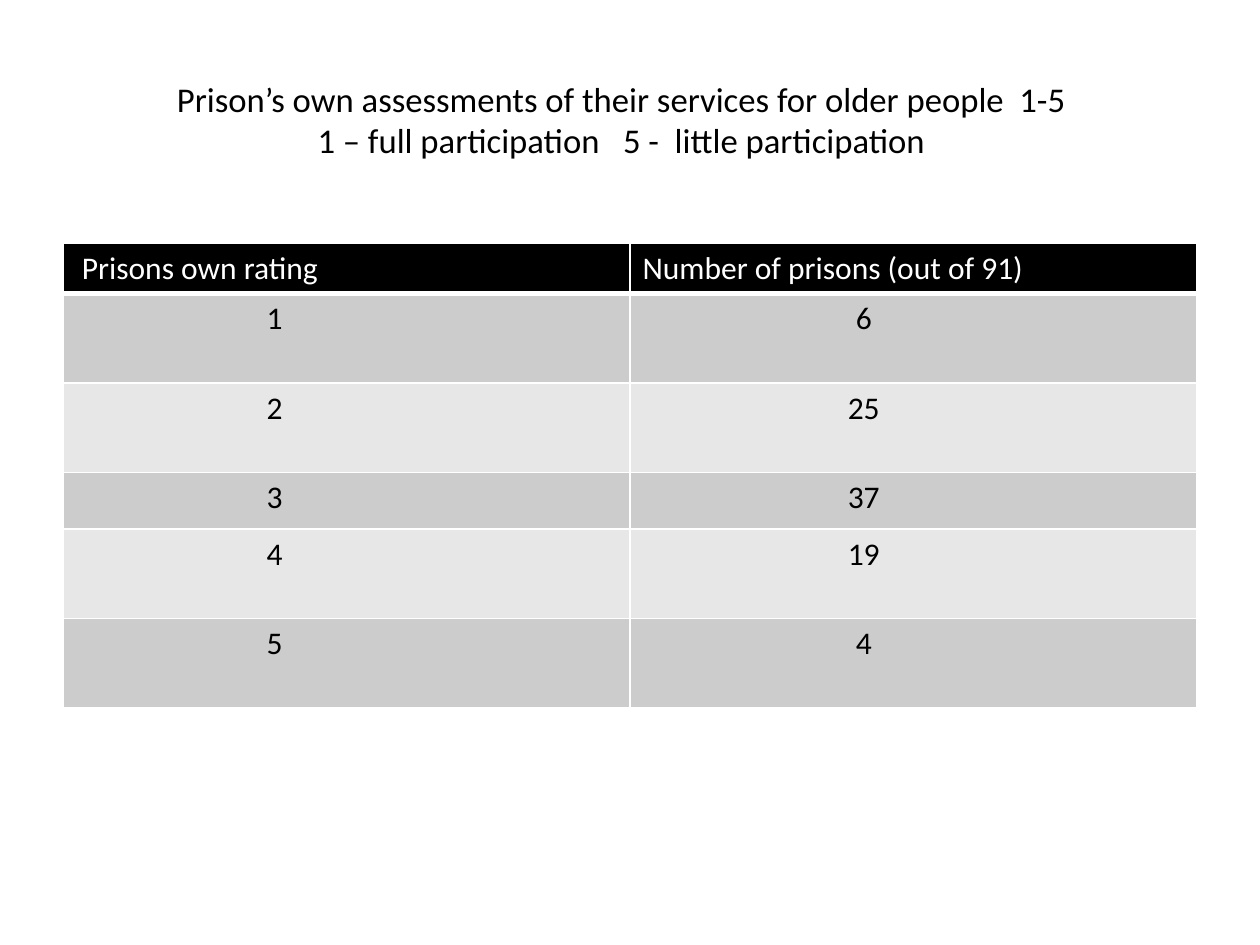
from dataclasses import dataclass

import pptx
import pptx.dml.color
import pptx.enum.text
import pptx.oxml
import pptx.oxml.ns
import pptx.table
import pptx.text.text
import pptx.util
from pptx.util import Inches

ALIGN = pptx.enum.text.PP_ALIGN


@dataclass(frozen=True)
class Theme:
    font: str = "Calibri"
    title_size: float = 19.8
    table_size: float = 18
    text: str = "000000"
    header_text: str = "FFFFFF"
    header_fill: str = "000000"
    bands: tuple[str, str] = ("CCCCCC", "E7E7E7")
    border: str = "FFFFFF"


@dataclass(frozen=True)
class Column:
    heading: str
    heading_inset: float
    value_right_inset: float


@dataclass(frozen=True)
class Rating:
    level: int
    prisons: int
    height: float = 0.71


THEME = Theme()
TITLE_LINES = (
    "Prison’s own assessments of their services for older people  1-5",
    "1 – full participation   5 -  little participation",
)
COLUMNS = (
    Column("Prisons own rating", 0.15, 1.24),
    Column("Number of prisons (out of 91)", 0.1, 0.89),
)
RATINGS = (
    Rating(1, 6),
    Rating(2, 25),
    Rating(3, 37, height=0.45),
    Rating(4, 19),
    Rating(5, 4),
)
HEADER_HEIGHT = 0.39
TABLE_WIDTH = 9


def style_paragraph(paragraph: pptx.text.text._Paragraph, size: float,
                    color: str, align: ALIGN) -> None:
    paragraph.alignment = align
    paragraph.font.name = THEME.font
    paragraph.font.size = pptx.util.Pt(size)
    paragraph.font.color.rgb = pptx.dml.color.RGBColor.from_string(color)


def set_borders(cell: pptx.table._Cell, bottom: float = 1) -> None:
    """Add the cell's border lines; call before the fill, which must follow them."""
    properties = cell._tc.get_or_add_tcPr()
    for side, width in (("L", 1), ("R", 1), ("T", 1), ("B", bottom)):
        properties.append(pptx.oxml.parse_xml(
            f'<a:ln{side} {pptx.oxml.ns.nsdecls("a")} w="{pptx.util.Pt(width)}">'
            f'<a:solidFill><a:srgbClr val="{THEME.border}"/></a:solidFill>'
            f'</a:ln{side}>'))


def fill_cell(cell: pptx.table._Cell, text: str, fill: str, color: str,
              align: ALIGN) -> None:
    cell.fill.solid()
    cell.fill.fore_color.rgb = pptx.dml.color.RGBColor.from_string(fill)
    cell.text = text
    style_paragraph(cell.text_frame.paragraphs[0], THEME.table_size, color, align)


def add_title(slide: pptx.slide.Slide) -> None:
    title = slide.shapes.add_textbox(
        Inches(0.43), Inches(0.32), Inches(9), Inches(1.25)).text_frame
    title.word_wrap = True
    title.vertical_anchor = pptx.enum.text.MSO_ANCHOR.MIDDLE
    title.text = "\n".join(TITLE_LINES)
    for line in title.paragraphs:
        style_paragraph(line, THEME.title_size, THEME.text, ALIGN.CENTER)


def add_ratings_table(slide: pptx.slide.Slide) -> None:
    heights = [HEADER_HEIGHT] + [rating.height for rating in RATINGS]
    table = slide.shapes.add_table(
        len(heights), len(COLUMNS), Inches(0.5), Inches(1.93),
        Inches(TABLE_WIDTH), Inches(sum(heights))).table
    for row, height in zip(table.rows, heights):
        row.height = Inches(height)

    for index, column in enumerate(COLUMNS):
        table.columns[index].width = Inches(TABLE_WIDTH / len(COLUMNS))
        heading = table.cell(0, index)
        heading.margin_left = Inches(column.heading_inset)
        set_borders(heading, bottom=3)
        fill_cell(heading, column.heading, THEME.header_fill,
                  THEME.header_text, ALIGN.LEFT)

    for row_index, rating in enumerate(RATINGS, start=1):
        band = THEME.bands[(row_index - 1) % 2]
        for index, value in enumerate((rating.level, rating.prisons)):
            cell = table.cell(row_index, index)
            cell.margin_right = Inches(COLUMNS[index].value_right_inset)
            set_borders(cell, bottom=1)
            fill_cell(cell, str(value), band, THEME.text, ALIGN.CENTER)


def main() -> None:
    presentation = pptx.Presentation()
    presentation.slide_width = Inches(10)
    presentation.slide_height = Inches(7.5)
    slide = presentation.slides.add_slide(presentation.slide_layouts[6])
    add_title(slide)
    add_ratings_table(slide)
    presentation.save("out.pptx")


if __name__ == "__main__":
    main()
